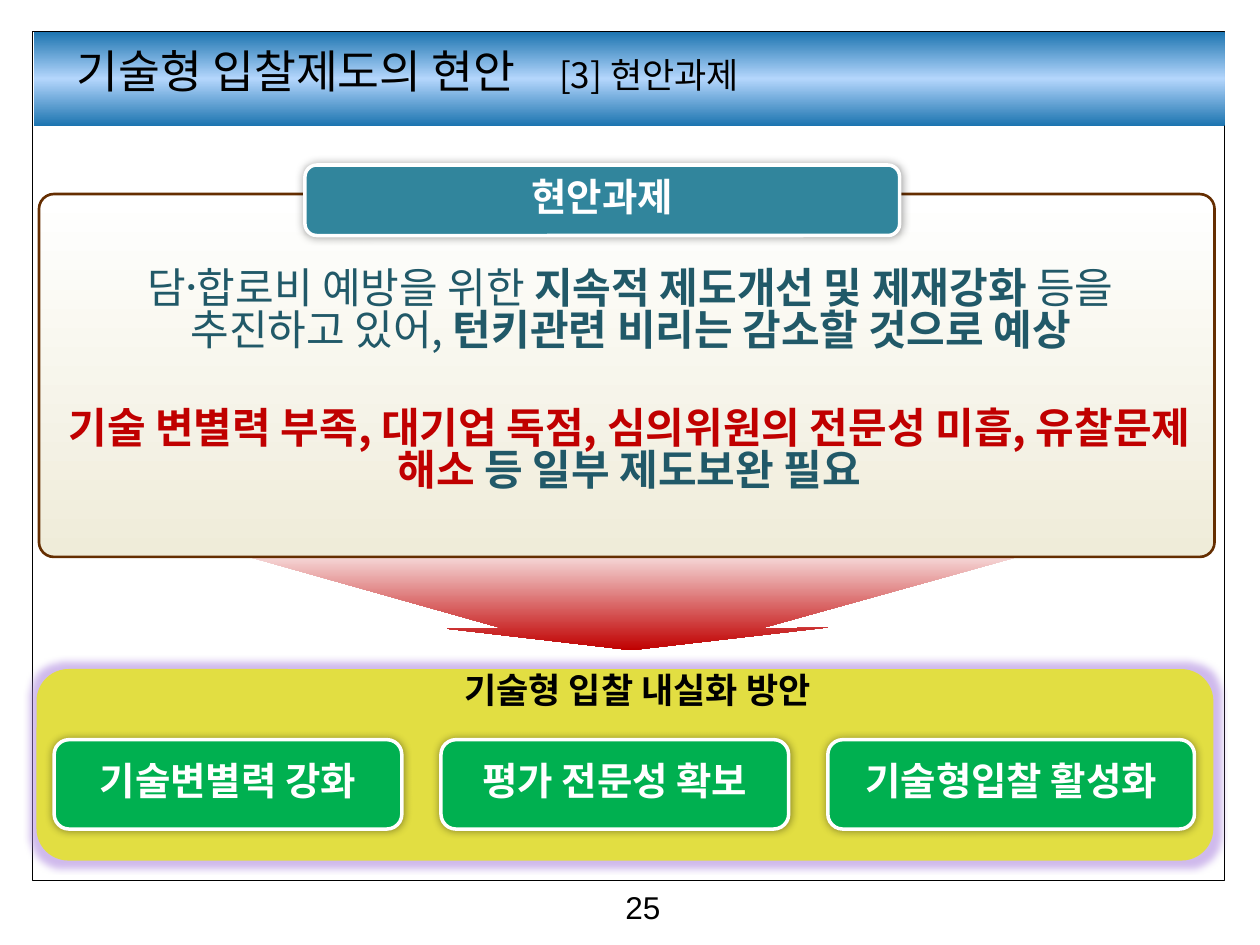
"""Build the slide on open issues of the technical bidding system."""
from typing import NamedTuple, Optional

from lxml.etree import SubElement
from pptx import Presentation
from pptx.dml.color import RGBColor
from pptx.enum.shapes import MSO_SHAPE
from pptx.enum.text import MSO_ANCHOR, PP_ALIGN
from pptx.oxml.ns import qn
from pptx.util import Emu, Inches, Pt

COLORS = {
    "black": "000000", "white": "FFFFFF", "red": "C00000", "teal": "31859C",
    "dark teal": "215968", "green": "00B050", "yellow": "E2DE42", "cream": "EFECD9",
    "brown": "652E01", "blue": "1C74B0", "light blue": "B4D6FC", "purple": "B08CE0",
}
KOREAN_FONT = "Noto Sans CJK KR"
COLUMNS, ROWS = 100, 75
CELL = Inches(0.1)


class Area(NamedTuple):
    left: float
    top: float
    width: float
    height: float


class Panel(NamedTuple):
    area: Area
    fills: tuple = ()
    line: Optional[str] = None
    line_width: float = 0
    corner: Optional[float] = None


class Piece(NamedTuple):
    text: str
    color: Optional[str] = None
    bold: Optional[bool] = None
    size: Optional[float] = None


class Caption(NamedTuple):
    area: Area
    pieces: tuple
    size: float
    color: str = "black"
    bold: Optional[bool] = None
    align: PP_ALIGN = PP_ALIGN.CENTER
    font: str = KOREAN_FONT
    tab: Optional[float] = None


FRAME = Panel(Area(2.6, 2.5, 94.6, 67.4), line="black", line_width=0.75)
HEADER = Panel(Area(2.7, 2.5, 94.5, 7.5), ("blue", "light blue", "blue"))
PLAN = Panel(Area(2.9, 53.1, 93.4, 15.2), ("yellow",), corner=0.167)
ISSUES = Panel(Area(3.1, 15.4, 93.3, 28.8), ("white", "cream"), "brown", 1.5, 0.041)
ARROW_POINTS = ((50.1, 51.6), (35.5, 49.9), (40, 49.9), (14.8, 42.8),
                (85.8, 42.8), (60.3, 49.9), (65.7, 49.8))
CARDS = (("기술변별력 강화", 27.6), ("평가 전문성 확보", 27.6), ("기술형입찰 활성화", 29.1))
CARD_LEFT, CARD_STEP = 4.3, 30.7
CAPTIONS = (
    Caption(Area(41.7, 70, 11.7, 5), (Piece("25"),), 18,
            align=PP_ALIGN.RIGHT, font="Arial"),
    Caption(Area(5.1, 3.6, 89, 5.4),
            (Piece("기술형 입찰제도의 현안\t"), Piece("[3] 현안과제", size=20)), 26,
            align=PP_ALIGN.LEFT, tab=38.3),
    Caption(Area(4.2, 32, 91.5, 9.1),
            (Piece("기술 변별력 부족, 대기업 독점, 심의위원의 전문성 미흡, 유찰문제 해소 ", "red"),
             Piece("등 일부 제도보완 필요", "dark teal")), 24, bold=True),
    Caption(Area(24.2, 53.1, 52.8, 4.4), (Piece("기술형 입찰 내실화 방안"),), 20, bold=True),
    Caption(Area(4.3, 20.9, 91.5, 9.1),
            (Piece("담합〮로비 예방을 위한 "), Piece("지속적 제도개선 및 제재강화 ", bold=True),
             Piece("등을 추진하고 있어, "), Piece("턴키관련 비리는 감소할 것으로 예상", bold=True)),
            24, "dark teal"),
)


def cells(count: float) -> Emu:
    return Emu(round(count * CELL))


def place(area: Area) -> list:
    return [cells(length) for length in area]


def rgb(name: str) -> RGBColor:
    return RGBColor.from_string(COLORS[name])


def paint(shape, fills: tuple) -> None:
    if not fills:
        shape.fill.background()
    elif len(fills) == 1:
        shape.fill.solid()
        shape.fill.fore_color.rgb = rgb(fills[0])
    else:
        shape.fill.gradient()
        shape.fill.gradient_angle = 270
        stops = shape._element.spPr.find(qn("a:gradFill")).find(qn("a:gsLst"))
        for stop in list(stops):
            stops.remove(stop)
        for index, name in enumerate(fills):
            position = str(100000 * index // (len(fills) - 1))
            stop = SubElement(stops, qn("a:gs"), pos=position)
            SubElement(stop, qn("a:srgbClr"), val=COLORS[name])


def add_effect(shape, kind: str, color: str, alpha: int, **attributes: str) -> None:
    effects = shape._element.spPr.find(qn("a:effectLst"))
    effect = SubElement(effects, qn(kind), **attributes)
    tint = SubElement(effect, qn("a:srgbClr"), val=COLORS[color])
    SubElement(tint, qn("a:alpha"), val=str(alpha * 1000))


def add_panel(slide, panel: Panel):
    kind = MSO_SHAPE.RECTANGLE if panel.corner is None else MSO_SHAPE.ROUNDED_RECTANGLE
    shape = slide.shapes.add_shape(kind, *place(panel.area))
    shape.shadow.inherit = False
    if panel.corner is not None:
        shape.adjustments[0] = panel.corner
    paint(shape, panel.fills)
    if panel.line:
        shape.line.color.rgb = rgb(panel.line)
        shape.line.width = Pt(panel.line_width)
    else:
        shape.line.fill.background()
    return shape


def write(frame, caption: Caption) -> None:
    frame.word_wrap = True
    paragraph = frame.paragraphs[0]
    paragraph.alignment = caption.align
    if caption.font == KOREAN_FONT:
        paragraph.line_spacing = 0.84
    properties = paragraph._p.get_or_add_pPr()
    if caption.tab is not None:
        tabs = SubElement(properties, qn("a:tabLst"))
        SubElement(tabs, qn("a:tab"), pos=str(cells(caption.tab)), algn="l")
    font = paragraph.font
    font.size, font.bold, font.name = Pt(caption.size), caption.bold, caption.font
    font.color.rgb = rgb(caption.color)
    SubElement(properties.find(qn("a:defRPr")), qn("a:ea"), typeface=caption.font)
    for piece in caption.pieces:
        run = paragraph.add_run()
        run.text = piece.text
        if piece.color:
            run.font.color.rgb = rgb(piece.color)
        if piece.bold is not None:
            run.font.bold = piece.bold
        if piece.size:
            run.font.size = Pt(piece.size)


def add_caption(slide, caption: Caption) -> None:
    write(slide.shapes.add_textbox(*place(caption.area)).text_frame, caption)


def add_button(slide, area: Area, text: str, fill: str) -> None:
    shape = add_panel(slide, Panel(area, (fill,), "white", 2, 0.167))
    add_effect(shape, "a:outerShdw", "black", 40, blurRad=str(Pt(5)), dist="0", dir="0")
    shape.text_frame.vertical_anchor = MSO_ANCHOR.MIDDLE
    write(shape.text_frame, Caption(area, (Piece(text),), 22, "white", True))


def add_arrow(slide) -> None:
    start, *rest = [(cells(x), cells(y)) for x, y in ARROW_POINTS]
    builder = slide.shapes.build_freeform(*start)
    builder.add_line_segments(rest, close=True)
    arrow = builder.convert_to_shape()
    arrow.shadow.inherit = False
    arrow.line.fill.background()
    paint(arrow, ("white", "red"))


def main() -> None:
    presentation = Presentation()
    presentation.slide_width, presentation.slide_height = cells(COLUMNS), cells(ROWS)
    slide = presentation.slides.add_slide(presentation.slide_layouts[6])
    add_panel(slide, FRAME)
    add_panel(slide, HEADER)
    add_arrow(slide)
    add_effect(add_panel(slide, PLAN), "a:glow", "purple", 60, rad=str(Pt(8)))
    add_panel(slide, ISSUES)
    add_button(slide, Area(24.2, 13.1, 47.2, 5.6), "현안과제", "teal")
    for index, (text, width) in enumerate(CARDS):
        area = Area(CARD_LEFT + index * CARD_STEP, 58.7, width, 7.1)
        add_button(slide, area, text, "green")
    for caption in CAPTIONS:
        add_caption(slide, caption)
    presentation.save("out.pptx")


if __name__ == "__main__":
    main()
